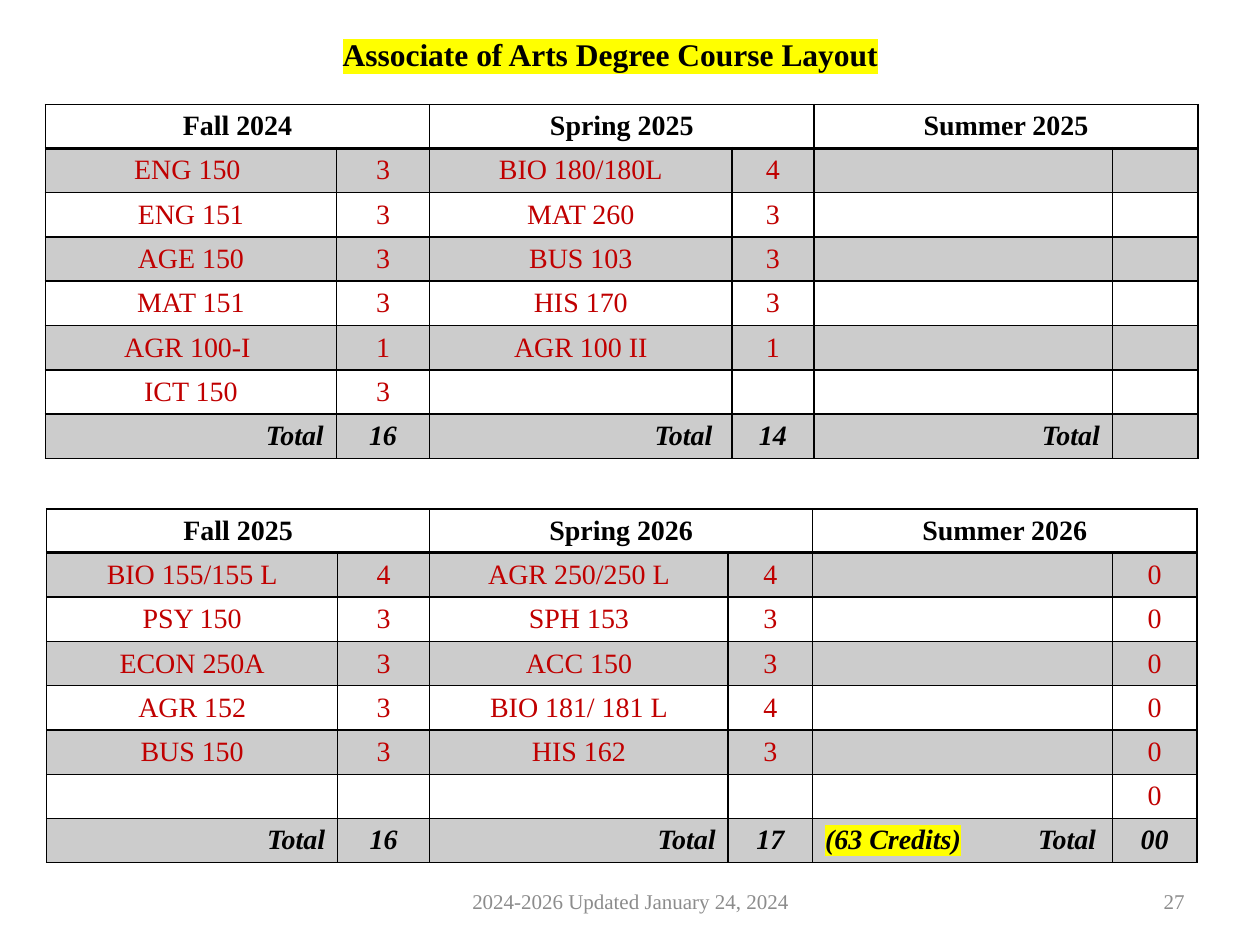
"""Build the two-year course layout slide for the Associate of Arts degree."""
import lxml.etree
import pptx
import pptx.dml.color
import pptx.enum.text
import pptx.oxml.ns
import pptx.util

Inches = pptx.util.Inches
ALIGN = pptx.enum.text.PP_ALIGN
BLACK = pptx.dml.color.RGBColor(0, 0, 0)
RED = pptx.dml.color.RGBColor(0xC0, 0, 0)
GRAY = pptx.dml.color.RGBColor(0x8C, 0x8C, 0x8C)
YELLOW = pptx.dml.color.RGBColor(0xFF, 0xFF, 0)
FONT = "Times New Roman"
CELL_SIZE = 16
TABLE_HEIGHT = 2.78
CREDITS_TAB = 1.69

YEARS = [
    {
        "left": 0.36, "top": 0.83,
        "columns": [2.31, 0.74, 2.4, 0.65, 2.37, 0.68],
        "terms": ["Fall 2024", "Spring 2025", "Summer 2025"],
        "courses": [
            ["ENG 150 ", "3", "BIO 180/180L", "4", "", ""],
            ["ENG 151", "3", "MAT 260", "3", "", ""],
            ["AGE 150", "3", "BUS 103", "3", "", ""],
            ["MAT 151", "3", "HIS 170", "3", "", ""],
            ["AGR 100-I ", "1", "AGR 100 II", "1", "", ""],
            ["ICT 150", "3", "", "", "", ""],
        ],
        "totals": ["Total", "16", "Total ", "14", "Total", ""],
    },
    {
        "left": 0.37, "top": 4.04,
        "columns": [2.31, 0.73, 2.37, 0.67, 2.38, 0.67],
        "terms": ["Fall 2025", "Spring 2026", "Summer 2026"],
        "courses": [
            ["BIO 155/155 L", "4", "AGR 250/250 L", "4", "", "0"],
            ["PSY 150", "3", "SPH 153", "3", "", "0"],
            ["ECON 250A", "3", "ACC 150", "3", "", "0"],
            ["AGR 152", "3", "BIO 181/ 181 L", "4", "", "0"],
            ["BUS 150", "3", "HIS 162", "3", "", "0"],
            ["", "", "", "", "", "0"],
        ],
        "totals": ["Total", "16", "Total", "17", "(63 Credits)\tTotal", "00"],
    },
]

LABELS = [
    ("Associate of Arts Degree Course Layout", (1.01, 0.23, 7.67, 0.4),
     ALIGN.CENTER, {"size": 18, "color": BLACK, "bold": True, "highlight": YELLOW}),
    ("2024-2026 Updated January 24, 2024", (3.42, 6.95, 3.17, 0.4),
     ALIGN.CENTER, {"size": 12, "color": GRAY}),
    ("27", (7.17, 6.95, 2.33, 0.4), ALIGN.RIGHT, {"size": 12, "color": GRAY}),
]


def add_element(parent, tag, **attributes):
    return lxml.etree.SubElement(parent, pptx.oxml.ns.qn(tag), attributes)


def add_span(para, text, size, color, bold=False, italic=False, highlight=None):
    span = para.add_run()
    span.text = text
    font = span.font
    font.size, font.bold, font.italic = pptx.util.Pt(size), bold, italic
    font.color.rgb = color
    font.name = FONT
    if highlight is not None:
        properties = span._r.get_or_add_rPr()
        marker = add_element(properties, "a:highlight")
        add_element(marker, "a:srgbClr", val=str(highlight))
        properties.find(pptx.oxml.ns.qn("a:latin")).addprevious(marker)


def style_cell(cell, row):
    """Set margins, borders and the shade of every second row."""
    cell.margin_top = cell.margin_bottom = Inches(0.04)
    cell.vertical_anchor = pptx.enum.text.MSO_ANCHOR.MIDDLE
    properties = cell._tc.get_or_add_tcPr()
    for side in "LRTB":
        heavy = (row, side) in ((0, "B"), (1, "T"))
        width = pptx.util.Pt(2 if heavy else 1)
        line = add_element(properties, f"a:ln{side}", w=str(width))
        add_element(add_element(line, "a:solidFill"), "a:srgbClr", val=str(BLACK))
    if row % 2:
        cell.fill.solid()
        cell.fill.fore_color.rgb = BLACK
        color = properties.find(pptx.oxml.ns.qn("a:solidFill"))[0]
        add_element(color, "a:alpha", val="20000")
    else:
        cell.fill.background()


def write_cell(cell, text, align, style):
    para = cell.text_frame.paragraphs[0]
    para.alignment = align
    lead, tab, rest = text.partition("\t")
    if tab:
        para.alignment = ALIGN.LEFT
        stops = add_element(para._p.get_or_add_pPr(), "a:tabLst")
        add_element(stops, "a:tab", pos=str(Inches(CREDITS_TAB)), algn="l")
        add_span(para, lead + tab, highlight=YELLOW, **style)
        add_span(para, rest, **style)
    elif text:
        add_span(para, text, **style)
    else:
        add_element(para._p, "a:endParaRPr", sz=str(CELL_SIZE * 100))


def add_year(page, year):
    heads = [text for term in year["terms"] for text in (term, "")]
    rows = [heads, *year["courses"], year["totals"]]
    widths = year["columns"]
    table = page.shapes.add_table(
        len(rows), len(widths), Inches(year["left"]), Inches(year["top"]),
        Inches(sum(widths)), Inches(TABLE_HEIGHT)).table
    table.first_row = table.horz_banding = False
    for column, width in zip(table.columns, widths):
        column.width = Inches(width)
    last = len(rows) - 1
    for row, texts in enumerate(rows):
        table.rows[row].height = Inches(TABLE_HEIGHT / len(rows))
        style = {"size": CELL_SIZE, "color": BLACK if row in (0, last) else RED,
                 "bold": row in (0, last), "italic": row == last}
        for column, text in enumerate(texts):
            cell = table.cell(row, column)
            style_cell(cell, row)
            total = row == last and column % 2 == 0
            write_cell(cell, text, ALIGN.RIGHT if total else ALIGN.CENTER, style)
    for column in range(0, len(widths), 2):
        table.cell(0, column).merge(table.cell(0, column + 1))


def add_label(page, text, place, align, style):
    box = page.shapes.add_textbox(*map(Inches, place))
    frame = box.text_frame
    frame.word_wrap = True
    frame.vertical_anchor = pptx.enum.text.MSO_ANCHOR.MIDDLE
    para = frame.paragraphs[0]
    para.alignment = align
    add_span(para, text, **style)


def main():
    deck = pptx.Presentation()
    deck.slide_width, deck.slide_height = Inches(10), Inches(7.5)
    page = deck.slides.add_slide(deck.slide_layouts[6])
    for year in YEARS:
        add_year(page, year)
    for label in LABELS:
        add_label(page, *label)
    deck.save("out.pptx")


if __name__ == "__main__":
    main()
